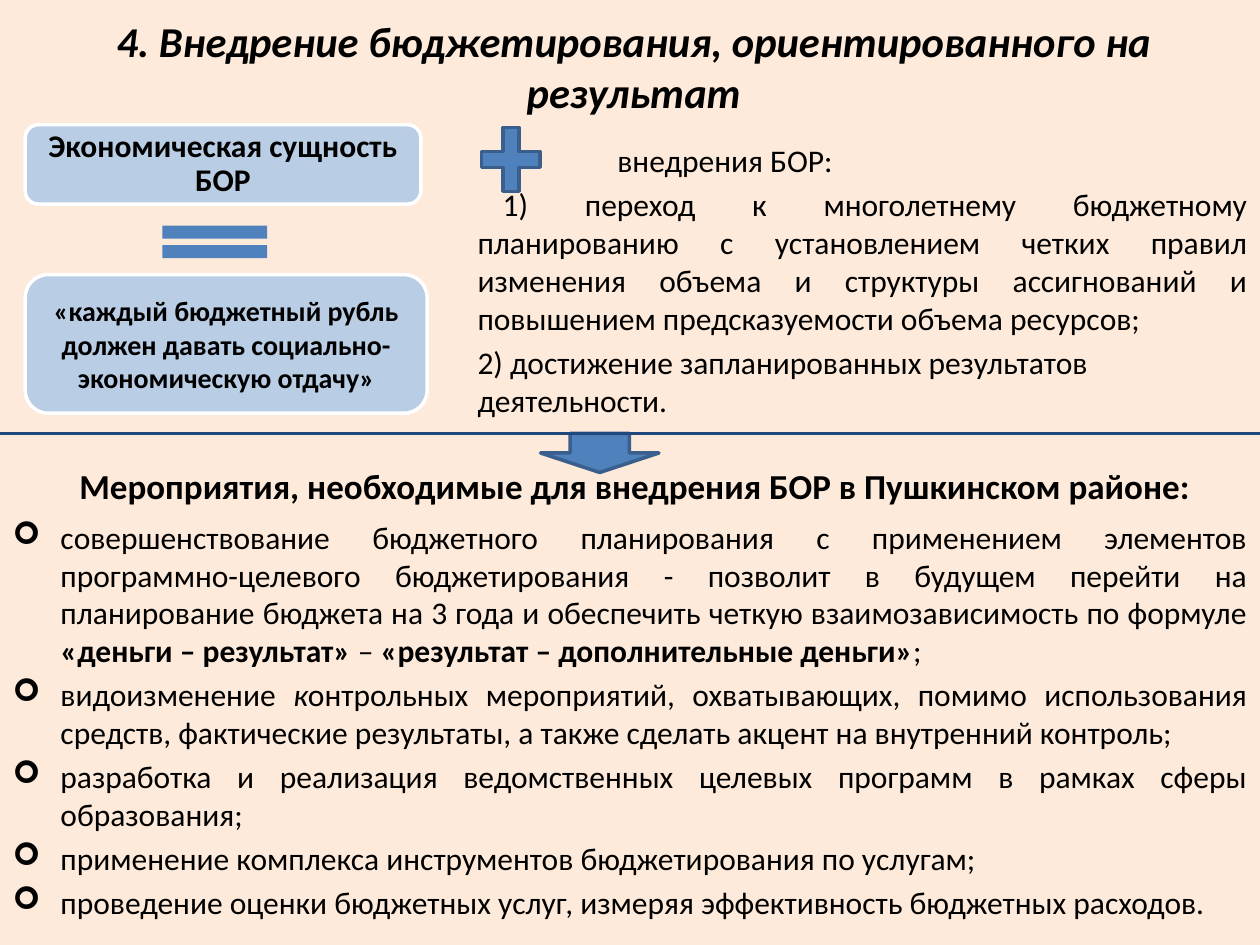
from lxml.etree import SubElement
from pptx import Presentation
from pptx.dml.color import RGBColor
from pptx.enum.shapes import MSO_CONNECTOR, MSO_SHAPE
from pptx.enum.text import MSO_ANCHOR, MSO_AUTO_SIZE, PP_ALIGN
from pptx.oxml.ns import qn
from pptx.util import Inches, Pt

PEACH = RGBColor(0xFD, 0xEA, 0xDA)
PALE_BLUE = RGBColor(0xB9, 0xCD, 0xE5)
BLUE = RGBColor(0x4F, 0x81, 0xBD)
EDGE_BLUE = RGBColor(0x3A, 0x5F, 0x8C)
NAVY = RGBColor(0x1F, 0x49, 0x7D)
WHITE = RGBColor(0xFF, 0xFF, 0xFF)
BLACK = RGBColor(0, 0, 0)


def add_run(p, text, size, bold=False, italic=False):
    r = p.add_run()
    r.text = text
    r.font.name = "Calibri"
    r.font.size = Pt(size)
    r.font.bold = bold
    r.font.italic = italic
    r.font.color.rgb = BLACK


def add_figure(kind, box, fill, edge=None):
    sp = s.shapes.add_shape(kind, *map(Inches, box))
    sp.shadow.inherit = False
    sp.fill.solid()
    sp.fill.fore_color.rgb = fill
    if edge is None:
        sp.line.fill.background()
    else:
        sp.line.color.rgb = edge
        sp.line.width = Pt(2)
    return sp


prs = Presentation()
prs.slide_width, prs.slide_height = Inches(10), Inches(7.5)
s = prs.slides.add_slide(prs.slide_layouts.get_by_name("Two Content"))
s.background.fill.solid()
s.background.fill.fore_color.rgb = PEACH

title, goals, measures = s.placeholders
for sp, box in [
    (title, (0.28, 0, 9.5, 1.25)),
    (goals, (3.31, 1.07, 6.69, 2.44)),
    (measures, (0, 4.06, 10, 3.44)),
]:
    sp.left, sp.top, sp.width, sp.height = map(Inches, box)
    sp.text_frame.auto_size = MSO_AUTO_SIZE.NONE
    sp.text_frame.word_wrap = True

tf = title.text_frame
tf.vertical_anchor = MSO_ANCHOR.MIDDLE
tf.margin_bottom = Inches(0.25)
p = tf.paragraphs[0]
p.alignment = PP_ALIGN.CENTER
add_run(p, "4. Внедрение бюджетирования, ориентированного на результат", 24.3, True, True)

goal_rows = [
    ("внедрения БОР:", 1.49, 0, PP_ALIGN.JUSTIFY),
    ("1) переход к многолетнему бюджетному планированию с установлением четких правил "
     "изменения объема и структуры ассигнований и повышением предсказуемости объема ресурсов;",
     0.38, 0.2, PP_ALIGN.JUSTIFY),
    ("2) достижение запланированных результатов деятельности.", 0.38, 0, PP_ALIGN.LEFT),
]
tf = goals.text_frame
for i, (text, margin, indent, align) in enumerate(goal_rows):
    p = tf.paragraphs[0] if i == 0 else tf.add_paragraph()
    p.alignment = align
    p.space_before = Pt(3.6)
    pPr = p._p.get_or_add_pPr()
    pPr.set("marL", str(Inches(margin)))
    pPr.set("indent", str(Inches(indent)))
    SubElement(pPr, qn("a:buNone"))
    add_run(p, text, 18)

measure_rows = [
    [("совершенствование бюджетного планирования с применением элементов "
      "программно-целевого бюджетирования - позволит в будущем перейти на планирование "
      "бюджета на 3 года и обеспечить четкую взаимозависимость по формуле ", False, False),
     ("«деньги – результат» ", True, False),
     ("– ", False, False),
     ("«результат – дополнительные деньги»", True, False),
     (";", False, False)],
    [("видоизменение", False, False),
     (" к", False, True),
     ("онтрольных мероприятий, охватывающих, помимо использования средств, фактические "
      "результаты, а также сделать акцент на внутренний контроль;", False, False)],
    [("разработка и реализация ведомственных целевых программ в рамках сферы образования;",
      False, False)],
    [("применение комплекса инструментов бюджетирования по услугам;", False, False)],
    [("проведение оценки бюджетных услуг, измеряя эффективность бюджетных расходов.",
      False, False)],
]
tf = measures.text_frame
for i, runs in enumerate(measure_rows):
    p = tf.paragraphs[0] if i == 0 else tf.add_paragraph()
    p.alignment = PP_ALIGN.JUSTIFY
    p.space_before = Pt(3.6)
    pPr = p._p.get_or_add_pPr()
    pPr.set("marL", str(Inches(0.38)))
    pPr.set("indent", str(Inches(-0.38)))
    SubElement(pPr, qn("a:buFont"), typeface="Wingdings")
    SubElement(pPr, qn("a:buChar"), char="➢")
    for text, bold, italic in runs:
        add_run(p, text, 18, bold, italic)

cards = [
    ("Экономическая сущность БОР", (0.2, 0.99, 3.14, 0.63), 18, 0.9),
    ("«каждый бюджетный рубль должен давать социально-экономическую отдачу»",
     (0.2, 2.18, 3.19, 1.1), 16, 1.0),
]
for text, box, size, spacing in cards:
    tf = add_figure(MSO_SHAPE.ROUNDED_RECTANGLE, box, PALE_BLUE, WHITE).text_frame
    tf.word_wrap = True
    tf.vertical_anchor = MSO_ANCHOR.MIDDLE
    tf.margin_left = tf.margin_right = tf.margin_top = tf.margin_bottom = Inches(0.03)
    p = tf.paragraphs[0]
    p.alignment = PP_ALIGN.CENTER
    p.line_spacing = spacing
    add_run(p, text, size, True)

add_figure(MSO_SHAPE.MATH_EQUAL, (1.14, 1.7, 1.13, 0.44), BLUE)
plus = add_figure(MSO_SHAPE.MATH_PLUS, (3.74, 0.92, 0.63, 0.69), BLUE, EDGE_BLUE)
plus.adjustments[0] = 0.2

heading = s.shapes.add_textbox(Inches(0.2), Inches(3.36), Inches(9.8), Inches(0.99))
tf = heading.text_frame
tf.word_wrap = True
tf.vertical_anchor = MSO_ANCHOR.MIDDLE
tf.margin_right = Inches(0.22)
p = tf.paragraphs[0]
p.alignment = PP_ALIGN.CENTER
add_run(p, "Мероприятия, необходимые для внедрения БОР в Пушкинском районе:", 20, True)

add_figure(MSO_SHAPE.DOWN_ARROW, (4.29, 3.44, 0.94, 0.31), BLUE, EDGE_BLUE)
divider = s.shapes.add_connector(
    MSO_CONNECTOR.STRAIGHT, 0, Inches(3.44), Inches(10), Inches(3.44))
divider.line.color.rgb = NAVY
divider.line.width = Pt(2)
SubElement(divider._element.spPr, qn("a:effectLst"))

prs.save("out.pptx")
